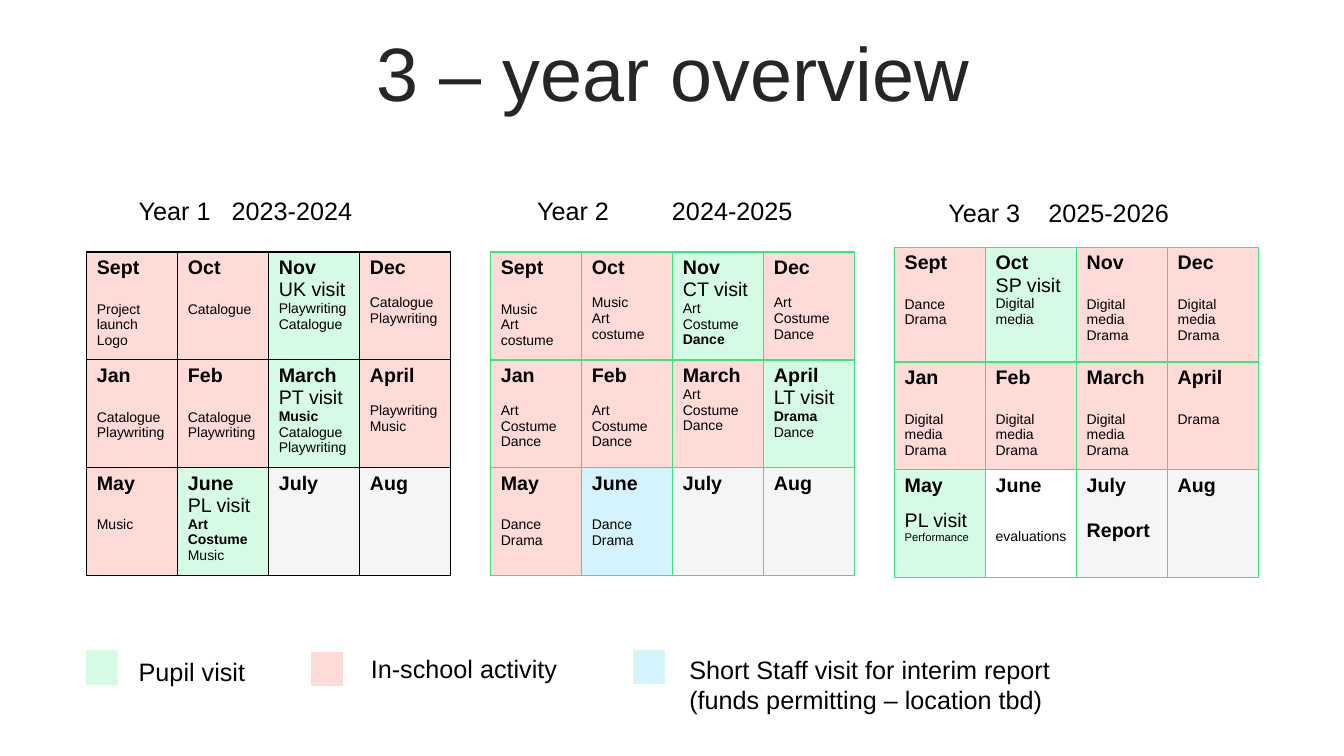
"""Build the three-year overview slide."""
from lxml import etree
from pptx import Presentation
from pptx.dml.color import RGBColor
from pptx.enum.shapes import MSO_SHAPE
from pptx.enum.text import MSO_ANCHOR, PP_ALIGN
from pptx.oxml.ns import qn
from pptx.util import Pt

RECT = MSO_SHAPE.RECTANGLE
TOP, MIDDLE = MSO_ANCHOR.TOP, MSO_ANCHOR.MIDDLE
LEFT, CENTER = PP_ALIGN.LEFT, PP_ALIGN.CENTER


class Theme:
    """Font, colours and type sizes of the slide."""
    font = "Arial"
    ink, head, green = "000000", "262626", "33E97C"
    fills = {"visit": "D6FBE5", "school": "FFDBD8", "staff": "D5F3FE",
             "free": "F5F5F5", "plain": "FFFFFF"}
    title, label, month = 54, 18, 14
    topic = (10, False)
    marks = {"*": (10, True), "+": (14, False), "#": (14, True), "-": (8, False)}


TINY, SMALL, WIDE, LARGE = 9.2, 11.5, 23, 16.1
COL, ROW = 65, 77

YEARS = [
    ("Year 1", "2023-2024", (92, 136), 66.4, (62, 180), Theme.ink, 1, (ROW, ROW, ROW), [
        [("school", "Sept", LARGE, "Project launch|Logo"),
         ("school", "Oct", LARGE, "Catalogue"),
         ("visit", "Nov", 0, "+UK visit|Playwriting|Catalogue"),
         ("school", "Dec", SMALL, "Catalogue|Playwriting")],
        [("school", "Jan", LARGE, "Catalogue|Playwriting"),
         ("school", "Feb", LARGE, "Catalogue|Playwriting"),
         ("visit", "March", 0, "+PT visit|*Music|Catalogue|Playwriting"),
         ("school", "April", SMALL, "Playwriting|Music")],
        [("school", "May", LARGE, "Music"),
         ("visit", "June", 0, "+PL visit|*Art|*Costume|Music"),
         ("free", "July", 0, ""),
         ("free", "Aug", 0, "")]]),
    ("Year 2", "2024-2025", (376.5, 136), 96.4, (350.6, 180), Theme.green, 2, (ROW, ROW, ROW), [
        [("school", "Sept", LARGE, "Music|Art|costume"),
         ("school", "Oct", SMALL, "Music|Art|costume"),
         ("visit", "Nov", 0, "+CT visit|Art|Costume|*Dance"),
         ("school", "Dec", SMALL, "Art|Costume|Dance")],
        [("school", "Jan", SMALL, "Art|Costume|Dance"),
         ("school", "Feb", SMALL, "Art|Costume|Dance"),
         ("school", "March", 0, "Art|Costume|Dance"),
         ("visit", "April", 0, "+LT visit|*Drama|Dance")],
        [("school", "May", LARGE, "Dance|Drama"),
         ("staff", "June", LARGE, "Dance|Drama"),
         ("free", "July", 0, ""),
         ("free", "Aug", 0, "")]]),
    ("Year 3", "2025-2026", (670.3, 137.5), 71.4, (639, 176.5), Theme.green, 2, (82, ROW, ROW), [
        [("school", "Sept", LARGE, "Dance|Drama"),
         ("visit", "Oct", 0, "+SP visit|Digital media"),
         ("school", "Nov", LARGE, "Digital media|Drama"),
         ("school", "Dec", LARGE, "Digital media|Drama")],
        [("school", "Jan", LARGE, "Digital media|Drama"),
         ("school", "Feb", LARGE, "Digital media|Drama"),
         ("school", "March", LARGE, "Digital media|Drama"),
         ("school", "April", LARGE, "Drama")],
        [("visit", "May", TINY, "+PL visit|-Performance"),
         ("plain", "June", WIDE, "evaluations"),
         ("free", "July", LARGE, "#Report"),
         ("free", "Aug", 0, "")]]),
]

LEGEND = [
    ("visit", (62, 465), (92, 465, 122, 29), "Pupil visit"),
    ("school", (223, 466), (257.8, 463, 174, 29), "In-school activity"),
    ("staff", (453, 464.5), (485.3, 463.7, 324.5, 51),
     "Short Staff visit for interim report (funds permitting – location tbd)"),
]


class Board:
    """Draw styled parts on one slide."""

    def __init__(self, slide, theme):
        self.slide, self.theme = slide, theme

    def run(self, para, text, size, bold=False, color=None):
        """Add one styled run."""
        run = para.add_run()
        run.text = text
        font = run.font
        font.name, font.size, font.bold = self.theme.font, Pt(size), bold
        font.color.rgb = RGBColor.from_string(color or self.theme.ink)

    def text(self, box, text, size, color=None, align=LEFT, anchor=TOP, tab=None):
        """Add a text box, with a tab stop if given."""
        frame = self.slide.shapes.add_textbox(*map(Pt, box)).text_frame
        frame.word_wrap, frame.vertical_anchor = True, anchor
        para = frame.paragraphs[0]
        para.alignment = align
        if tab:
            stops = etree.SubElement(para._p.get_or_add_pPr(), qn("a:tabLst"))
            etree.SubElement(stops, qn("a:tab"), pos=str(Pt(tab)), algn="l")
        self.run(para, text, size, color=color)
        return para

    def swatch(self, spot, fill, line):
        """Add one legend square."""
        shape = self.slide.shapes.add_shape(RECT, *map(Pt, (*spot, 21.6, 23.8)))
        shape.shadow.inherit = False
        shape.fill.solid()
        shape.fill.fore_color.rgb = RGBColor.from_string(fill)
        shape.line.color.rgb = RGBColor.from_string(line)
        shape.line.width = Pt(1)

    def edge(self, cell, side, color, width):
        """Draw one border of a cell."""
        line = etree.SubElement(cell._tc.get_or_add_tcPr(), qn("a:ln" + side), w=str(Pt(width)))
        solid = etree.SubElement(line, qn("a:solidFill"))
        etree.SubElement(solid, qn("a:srgbClr"), val=color)

    def cell(self, cell, fill, month, gap, lines):
        """Fill one month."""
        cell.fill.solid()
        cell.fill.fore_color.rgb = RGBColor.from_string(self.theme.fills[fill])
        frame = cell.text_frame
        self.run(frame.paragraphs[0], month, self.theme.month, True)
        for i, line in enumerate(lines.split("|") if lines else []):
            para = frame.add_paragraph()
            if i == 0 and gap:
                para.space_before = Pt(gap)
            size, bold = self.theme.marks.get(line[0], self.theme.topic)
            self.run(para, line.lstrip("*+#-"), size, bold)

    def table(self, spot, rows, color, rule, months):
        """Add one year of months, with a rule below the first row."""
        count = len(months[0])
        box = (*spot, COL * count, sum(rows))
        table = self.slide.shapes.add_table(len(rows), count, *map(Pt, box)).table
        table.first_row = table.horz_banding = False
        for col in table.columns:
            col.width = Pt(COL)
        for i, (high, row) in enumerate(zip(rows, months)):
            table.rows[i].height = Pt(high)
            for j, month in enumerate(row):
                cell = table.cell(i, j)
                for side in "LRTB":
                    thick = (i, side) in ((0, "B"), (1, "T"))
                    self.edge(cell, side, color, rule if thick else 1)
                self.cell(cell, *month)


def main():
    """Build and save the slide."""
    deck = Presentation()
    deck.slide_width, deck.slide_height = Pt(960), Pt(540)
    theme = Theme()
    board = Board(deck.slides.add_slide(deck.slide_layouts[6]), theme)
    title = board.text((25, 26.6, 911.5, 57), "3 – year overview", theme.title,
                       theme.head, CENTER, MIDDLE)
    title.line_spacing = 0.9
    for name, dates, spot, tab, grid, color, rule, rows, months in YEARS:
        board.text((*spot, 243, 29), f"{name}\t{dates}", theme.label, tab=tab)
        board.table(grid, rows, color, rule, months)
    for key, spot, box, label in LEGEND:
        line = theme.fills["visit" if key == "staff" else key]
        board.swatch(spot, theme.fills[key], line)
        board.text(box, label, theme.label)
    deck.save("out.pptx")


if __name__ == "__main__":
    main()
